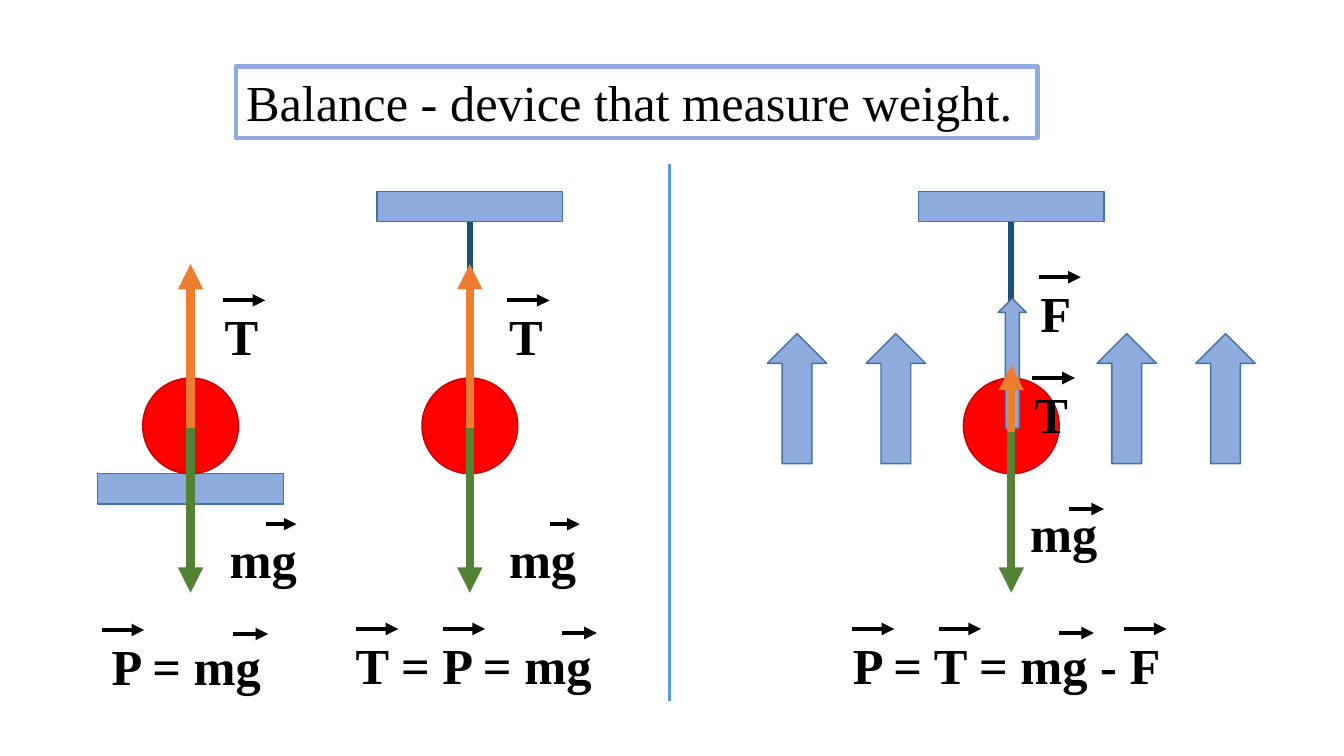
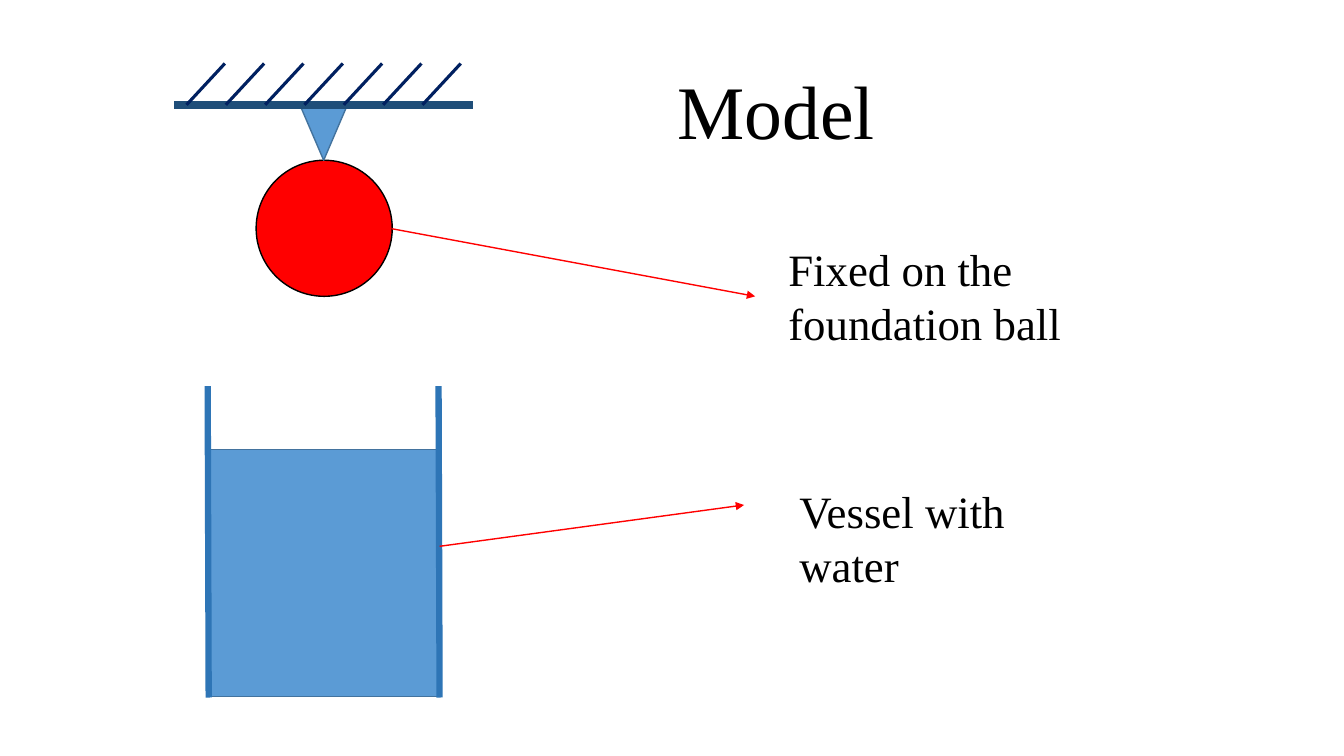
from lxml.etree import SubElement
from pptx import Presentation
from pptx.dml.color import RGBColor
from pptx.enum.shapes import MSO_CONNECTOR, MSO_SHAPE
from pptx.enum.text import MSO_ANCHOR, MSO_AUTO_SIZE, PP_ALIGN
from pptx.oxml.ns import qn
from pptx.util import Inches, Pt

FONT = "Times New Roman"
BLACK, RED, DARK_RED = "000000", "FF0000", "C00000"
LIGHT_BLUE, BLUE, OUTLINE = "8FAADC", "5B9BD5", "43739E"
WALL_BLUE, ROPE_BLUE, HATCH_BLUE = "2E75B6", "1F4E79", "002060"
ORANGE, GREEN = "ED7D31", "548235"

PLATE_WIDTH, PLATE_HEIGHT = 1.84, 0.3
BALL_SIZE, BALL_TOP = 0.95, 3.75
CEILING_TOP = 1.9
WEIGHT_END = 5.88
LETTER_BAR = (0.08, 0, 0.42)


def color(value):
    return RGBColor.from_string(value)


class SlideBuilder:
    """Holds the shared style and the slide being drawn; lengths are in inches."""

    def __init__(self, deck):
        self.deck = deck
        self.page = None

    def new_page(self):
        self.page = self.deck.slides.add_slide(self.deck.slide_layouts[5])

    def place_text(self, box, text, size, bold=False):
        frame = box.text_frame
        frame.word_wrap = True
        frame.auto_size = MSO_AUTO_SIZE.NONE
        frame.vertical_anchor = MSO_ANCHOR.TOP
        frame.text = text
        para = frame.paragraphs[0]
        para.alignment = PP_ALIGN.LEFT
        para.font.name = FONT
        para.font.size = Pt(size)
        para.font.bold = bold
        para.font.color.rgb = color(BLACK)

    def title(self, text, left, top, width, height, size, border=None):
        box = self.page.shapes.title
        box.left, box.top = Inches(left), Inches(top)
        box.width, box.height = Inches(width), Inches(height)
        self.place_text(box, text, size)
        if border:
            box.line.color.rgb = color(border)
            box.line.width = Pt(3)

    def text(self, text, left, top, width, height=0.71, size=36, bold=False):
        box = self.page.shapes.add_textbox(
            Inches(left), Inches(top), Inches(width), Inches(height))
        self.place_text(box, text, size, bold)

    def shape(self, kind, left, top, width, height, fill, outline=OUTLINE):
        shape = self.page.shapes.add_shape(
            kind, Inches(left), Inches(top), Inches(width), Inches(height))
        shape.shadow.inherit = False
        shape.fill.solid()
        shape.fill.fore_color.rgb = color(fill)
        shape.line.color.rgb = color(outline)
        shape.line.width = Pt(1)
        return shape

    def line(self, start, end, stroke, width, arrow=False):
        line = self.page.shapes.add_connector(
            MSO_CONNECTOR.STRAIGHT, *(Inches(value) for value in (*start, *end)))
        line.line.color.rgb = color(stroke)
        line.line.width = Pt(width)
        if arrow:
            SubElement(line.line._get_or_add_ln(), qn("a:tailEnd"), type="triangle")
        SubElement(line._element.spPr, qn("a:effectLst"))
        return line

    def vector_text(self, text, left, top, width, *bars):
        """Bold text with vector arrows above it; a bar is (x offset, y offset, length)."""
        self.text(text, left, top, width, bold=True)
        for x_offset, y_offset, length in bars:
            x, y = left + x_offset, top + y_offset
            self.line((x, y), (x + length, y), BLACK, 3, arrow=True)

    def plate(self, center, top):
        return self.shape(MSO_SHAPE.RECTANGLE, center - PLATE_WIDTH / 2, top,
                          PLATE_WIDTH, PLATE_HEIGHT, LIGHT_BLUE)

    def ball(self, center):
        return self.shape(MSO_SHAPE.OVAL, center - BALL_SIZE / 2, BALL_TOP,
                          BALL_SIZE, BALL_SIZE, RED, DARK_RED)

    def hanging_ball(self, center):
        plate, ball = self.plate(center, CEILING_TOP), self.ball(center)
        rope = self.line((center, CEILING_TOP + PLATE_HEIGHT), (center, BALL_TOP),
                         ROPE_BLUE, 4.5)
        rope.begin_connect(plate, 2)
        rope.end_connect(ball, 0)

    def force(self, x, start, end, stroke):
        self.line((x, start), (x, end), stroke, 6, arrow=True)

    def up_arrow(self, left, top, width):
        self.shape(MSO_SHAPE.UP_ARROW, left, top, width, 1.29, LIGHT_BLUE)


def draw_balance(builder):
    builder.new_page()
    builder.title("Balance - device that measure weight.",
                  2.34, 0.66, 7.95, 0.71, 36, LIGHT_BLUE)
    builder.line((6.64, 1.63), (6.64, 6.95), BLUE, 2.25)

    standing, hanging, lifted = 1.89, 4.66, 10.03
    builder.plate(standing, BALL_TOP + BALL_SIZE)
    builder.ball(standing)
    builder.hanging_ball(hanging)
    for center, label_left in ((standing, 2.13), (hanging, 4.95)):
        builder.force(center, 4.25, WEIGHT_END, GREEN)
        builder.force(center, 4.25, 2.62, ORANGE)
        builder.vector_text("T", label_left, 2.98, 0.62, LETTER_BAR)
    builder.vector_text("mg", 2.18, 5.19, 0.92, (0.46, 0.01, 0.3))
    builder.vector_text("mg", 4.95, 5.19, 0.92, (0.5, 0.01, 0.3))

    builder.hanging_ball(lifted)
    builder.force(lifted, 4.22, WEIGHT_END, GREEN)
    for pair_left in (7.61, 10.88):
        for index in range(2):
            builder.up_arrow(pair_left + index * 0.98, 3.31, 0.59)
    builder.up_arrow(9.9, 2.96, 0.28)
    builder.force(lifted, 4.29, 3.62, ORANGE)
    builder.vector_text("T", 10.16, 3.75, 0.62, LETTER_BAR)
    builder.vector_text("F", 10.22, 2.75, 0.62, LETTER_BAR)
    builder.vector_text("mg", 10.12, 4.93, 1.24, (0.48, 0.12, 0.35))

    builder.vector_text("P = mg", 1.01, 6.25, 1.75, (0, 0, 0.42), (1.3, 0.04, 0.35))
    builder.vector_text("T = P = mg", 3.43, 6.24, 2.75,
                        (0.1, 0, 0.42), (0.96, 0, 0.42), (2.14, 0.04, 0.35))
    builder.vector_text("P = T = mg - F", 8.36, 6.24, 3.79,
                        (0.09, 0, 0.42), (0.95, 0, 0.42),
                        (2.14, 0.04, 0.35), (2.79, 0, 0.42))


def draw_model(builder):
    builder.new_page()
    builder.title("Model", 6.62, 0.58, 2.42, 1.01, 54)

    builder.shape(MSO_SHAPE.OVAL, 2.54, 1.59, 1.35, 1.35, RED, BLACK)
    holder = builder.shape(MSO_SHAPE.ISOSCELES_TRIANGLE, 2.97, 1.03, 0.48, 0.56, BLUE)
    holder.rotation = 180
    ceiling = 1.04
    builder.line((1.73, ceiling), (4.69, ceiling), ROPE_BLUE, 6)
    for index in range(7):
        x = 1.85 + index * 0.39
        builder.line((x, ceiling), (x + 0.38, 0.63), HATCH_BLUE, 2.25)

    builder.shape(MSO_SHAPE.RECTANGLE, 2.06, 4.46, 2.31, 2.45, BLUE)
    for x in (2.06, 4.35):
        builder.line((x, 3.83), (x + 0.01, 6.92), WALL_BLUE, 4.5)

    builder.line((3.89, 2.27), (7.49, 2.94), RED, 1, arrow=True)
    builder.text("Fixed on the foundation ball", 7.72, 2.35, 3.51, 1.18, 32)
    builder.line((4.36, 5.42), (7.38, 5.01), RED, 1, arrow=True)
    builder.text("Vessel with water", 7.83, 4.75, 2.36, 1.18, 32)


def main():
    deck = Presentation()
    deck.slide_width, deck.slide_height = Inches(13.33), Inches(7.5)
    builder = SlideBuilder(deck)
    draw_balance(builder)
    draw_model(builder)
    deck.save("out.pptx")


if __name__ == "__main__":
    main()
